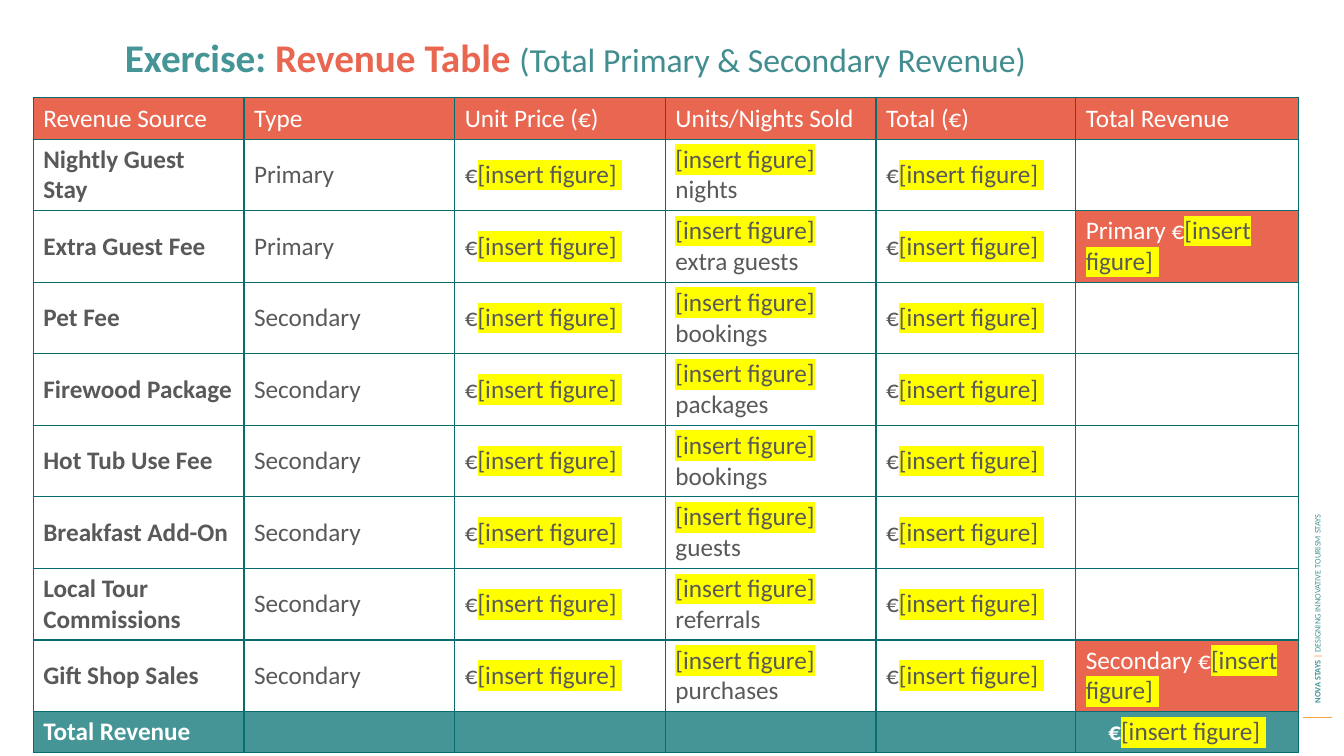
import pptx
import pptx.dml.color
import pptx.enum.shapes
import pptx.enum.text
import pptx.oxml.ns
import pptx.util
from lxml import etree
from pptx.util import Inches

CORAL, TEAL, DARK_TEAL = "E96751", "459597", "086D6E"
GREY, WHITE, YELLOW, AMBER = "595959", "FFFFFF", "FFFF00", "FBA63D"
FIGURE = "[insert figure] "
MIDDLE = pptx.enum.text.MSO_ANCHOR.MIDDLE

COLUMN_WIDTHS = [2.09, 2.09, 2.09, 2.09, 1.98, 2.21]
HEADINGS = ["Revenue Source", "Type", "Unit Price (€)", "Units/Nights Sold",
            "Total (€)", "Total Revenue"]
# Source, type, unit sold, subtotal label
SOURCES = [
    ("Nightly Guest Stay", "Primary", "nights", None),
    ("Extra Guest Fee", "Primary", "extra guests", "Primary €"),
    ("Pet Fee", "Secondary", "bookings", None),
    ("Firewood Package", "Secondary", "packages", None),
    ("Hot Tub Use Fee", "Secondary", "bookings", None),
    ("Breakfast Add-On", "Secondary", "guests", None),
    ("Local Tour Commissions", "Secondary", "referrals", None),
    ("Gift Shop Sales", "Secondary", "purchases", "Secondary €"),
]


def rgb(value):
    return pptx.dml.color.RGBColor.from_string(value)


def add_xml(parent, tag, **attributes):
    return etree.SubElement(parent, pptx.oxml.ns.qn(tag), **attributes)


def add_text(paragraph, text, size=18, color=GREY, bold=False, highlight=None):
    run = paragraph.add_run()
    run.text = text
    run.font.name = "Calibri"
    run.font.size = pptx.util.Pt(size)
    run.font.bold = bold
    run.font.color.rgb = rgb(color)
    if highlight:
        properties = run.font._element
        mark = add_xml(properties, "a:highlight")
        add_xml(mark, "a:srgbClr", val=highlight)
        properties.find(pptx.oxml.ns.qn("a:solidFill")).addnext(mark)


def add_text_box(slide, left, top, width, height):
    box = slide.shapes.add_textbox(Inches(left), Inches(top),
                                   Inches(width), Inches(height))
    box.text_frame.word_wrap = True
    return box


def add_rule(slide, x1, y1, x2, y2, color, width):
    rule = slide.shapes.add_connector(
        pptx.enum.shapes.MSO_CONNECTOR.STRAIGHT,
        Inches(x1), Inches(y1), Inches(x2), Inches(y2))
    rule.line.color.rgb = rgb(color)
    rule.line.width = pptx.util.Pt(width)
    add_xml(rule._element.spPr, "a:effectLst")


def style_cell(cell, fill=None):
    cell.vertical_anchor = MIDDLE
    properties = cell._tc.get_or_add_tcPr()
    for side in ("a:lnL", "a:lnR", "a:lnT", "a:lnB"):
        border = add_xml(properties, side, w=str(pptx.util.Pt(1)))
        add_xml(add_xml(border, "a:solidFill"), "a:srgbClr", val=DARK_TEAL)
    if fill:
        cell.fill.solid()
        cell.fill.fore_color.rgb = rgb(fill)
    else:
        cell.fill.background()


def fill_row(cells, contents, fills):
    """Each content is a list of (text, format) pairs."""
    for cell, content, fill in zip(cells, contents, fills):
        style_cell(cell, fill)
        paragraph = cell.text_frame.paragraphs[0]
        paragraph.font.size = pptx.util.Pt(18)
        for text, style in content:
            add_text(paragraph, text, **style)


def add_revenue_table(slide):
    row_heights = [0.41] + [0.71] * len(SOURCES) + [0.41]
    table = slide.shapes.add_table(
        len(row_heights), len(COLUMN_WIDTHS), Inches(0.33), Inches(0.97),
        Inches(sum(COLUMN_WIDTHS)), Inches(sum(row_heights))).table
    table.first_row = table.horz_banding = False
    for column, width in zip(table.columns, COLUMN_WIDTHS):
        column.width = Inches(width)
    for row, height in zip(table.rows, row_heights):
        row.height = Inches(height)
    rows = [list(row.cells) for row in table.rows]

    # Heading row
    white, bold_white = {"color": WHITE}, {"color": WHITE, "bold": True}
    fill_row(rows[0], [[(heading, white)] for heading in HEADINGS], [CORAL] * 6)

    # One row per revenue source
    figure = (FIGURE, {"highlight": YELLOW})
    amount = [("€", {}), figure]
    for cells, (source, kind, unit, subtotal) in zip(rows[1:], SOURCES):
        contents = [[(source, {"bold": True})], [(kind, {})], amount,
                    [figure, (unit, {})], amount,
                    [(subtotal, white), figure] if subtotal else []]
        fill_row(cells, contents, [None] * 5 + [CORAL if subtotal else None])

    # Grand total row
    total = [[("Total Revenue", bold_white)], [], [], [], [],
             [("€", bold_white), figure]]
    fill_row(rows[-1], total, [TEAL] * 6)
    grand_total = rows[-1][-1].text_frame.paragraphs[0]
    grand_total.alignment = pptx.enum.text.PP_ALIGN.CENTER


def add_side_label(slide):
    add_rule(slide, 12.92, 7.12, 13.21, 7.12, AMBER, 0.75)
    label = add_text_box(slide, 10.18, 4.09, 5.77, 0.2)
    label.rotation = 270
    label.text_frame.vertical_anchor = MIDDLE
    paragraph = label.text_frame.paragraphs[0]
    add_text(paragraph, "NOVA STAYS ", size=6, color=TEAL, bold=True)
    add_text(paragraph, "| ", size=6, color=AMBER, bold=True)
    add_text(paragraph, "DESIGNING INNOVATIVE TOURISM STAYS", size=6, color=TEAL)


def add_title(slide):
    title = add_text_box(slide, 1.14, 0.33, 11.61, 0.88)
    paragraph = title.text_frame.paragraphs[0]
    paragraph.line_spacing = 0.9
    add_text(paragraph, "Exercise: ", size=28, color=TEAL, bold=True)
    add_text(paragraph, "Revenue Table ", size=28, color=CORAL, bold=True)
    add_text(paragraph, "(Total Primary & Secondary Revenue)", size=24,
             color="418D8F")


def main():
    deck = pptx.Presentation()
    deck.slide_width, deck.slide_height = Inches(13.33), Inches(7.5)
    slide = deck.slides.add_slide(deck.slide_layouts[6])
    add_side_label(slide)
    add_title(slide)
    add_revenue_table(slide)
    deck.save("out.pptx")


if __name__ == "__main__":
    main()
